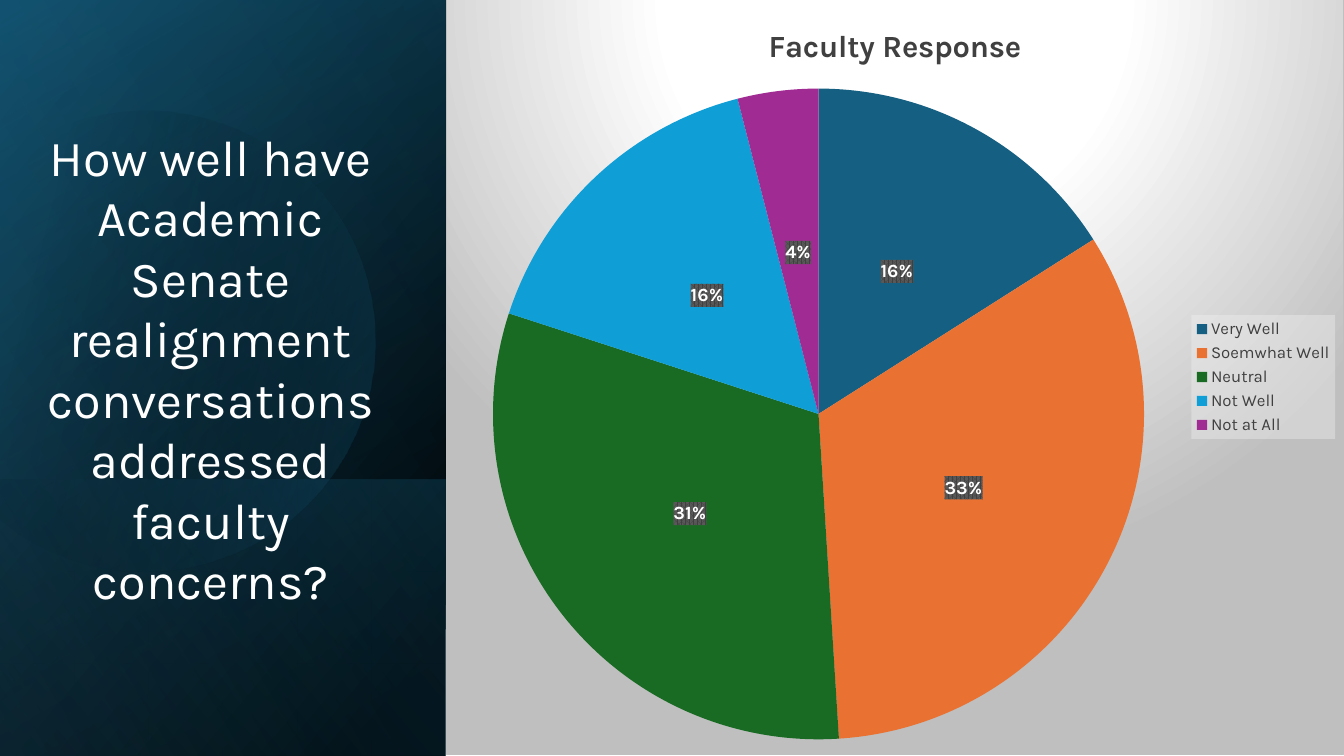
import math

from lxml import etree
from pptx import Presentation
from pptx.chart.data import CategoryChartData
from pptx.dml.color import RGBColor
from pptx.enum.chart import XL_CHART_TYPE, XL_LABEL_POSITION, XL_LEGEND_POSITION
from pptx.enum.shapes import MSO_SHAPE
from pptx.enum.text import MSO_AUTO_SIZE, PP_ALIGN
from pptx.oxml.ns import qn
from pptx.util import Inches, Pt

PIE, RECTANGLE = XL_CHART_TYPE.PIE, MSO_SHAPE.RECTANGLE
LABEL_CENTER, LEGEND_RIGHT = XL_LABEL_POSITION.CENTER, XL_LEGEND_POSITION.RIGHT
CENTER, FIT_SHAPE = PP_ALIGN.CENTER, MSO_AUTO_SIZE.SHAPE_TO_FIT_TEXT

# Content
QUESTION = "How well have Academic Senate realignment conversations addressed faculty concerns?"
CHART_TITLE = "Faculty Response"
RESPONSES = [  # answer, percent, slice colour
    ("Very Well", 16, "156082"),
    ("Soemwhat Well", 33, "E97132"),
    ("Neutral", 31, "196B24"),
    ("Not Well", 16, "0F9ED5"),
    ("Not at All", 4, "A02B93"),
]


class Theme:
    font = "Karla"
    white, black, gray = "FFFFFF", "000000", "404040"
    blue, deep_blue, light_blue = "156082", "104862", "46B1E1"
    border, legend_fill, pattern_back = "BFBFBF", "F2F2F2", "595959"
    question_size, title_size, label_size, legend_size, chart_size = 36, 22, 13.3, 12, 10


# Panel layers are laid out sideways, then turned a quarter turn.
# Each gradient stop is position, colour, opacity, all in percent.
PANEL_WIDTH = 4.42
SLIDE_WIDTH, SLIDE_HEIGHT = 13.33, 7.5
BASE_LAYERS = [  # top, height, angle, stops
    (0, 7.5, 50, [(8, Theme.black, 100), (100, Theme.deep_blue, 100)]),
    (0, 7.5, 30, [(0, Theme.black, 0), (99, Theme.blue, 46)]),
    (4.76, 2.74, 130, [(2, Theme.blue, 29), (100, Theme.black, 30)]),
]
TOP_LAYER = (0, 7.5, 120, [(0, Theme.black, 0), (99, Theme.light_blue, 11)])
DISC_STOPS = [(29, Theme.black, 0), (100, Theme.blue, 43)]
DISC_CENTER, DISC_TURN = (1.58, 3.35), -16.1
DISC_START = (1.49, 1.1)
DISC_CURVES = [  # two handles and an end point; a lone point is a straight edge
    [(2.46, 1.12), (3.35, 1.77), (3.63, 2.75)],
    [(3.98, 3.97), (3.28, 5.23), (2.07, 5.58)],
    [(1.31, 5.8), (0.53, 5.61), (-0.03, 5.14)],
    [(-0.15, 5.03)],
    [(-0.15, 1.75)],
    [(0, 1.61)],
    [(0.23, 1.42), (0.5, 1.28), (0.8, 1.19)],
    [(1.03, 1.13), (1.26, 1.1), (1.49, 1.1)],
]
NAMESPACES = ('xmlns:a="http://schemas.openxmlformats.org/drawingml/2006/main" '
              'xmlns:c="http://schemas.openxmlformats.org/drawingml/2006/chart"')


def rgb(color):
    return RGBColor.from_string(color)


def set_font(font, size, color, bold=False):
    font.name, font.size, font.bold = Theme.font, Pt(size), bold
    font.color.rgb = rgb(color)


def color_xml(color, opacity=100):
    return f'<a:srgbClr val="{color}"><a:alpha val="{opacity * 1000}"/></a:srgbClr>'


def gradient_xml(stops, direction):
    stop_list = "".join(f'<a:gs pos="{position * 1000}">{color_xml(color, opacity)}</a:gs>'
                        for position, color, opacity in stops)
    return (f'<a:gradFill {NAMESPACES} rotWithShape="1"><a:gsLst>{stop_list}</a:gsLst>'
            f'{direction}</a:gradFill>')


def fill_gradient(shape, angle, stops):
    shape.fill.background()
    placeholder_fill = shape.element.spPr.find(qn("a:noFill"))
    gradient = gradient_xml(stops, f'<a:lin ang="{angle * 60000}" scaled="0"/>')
    placeholder_fill.getparent().replace(placeholder_fill, etree.fromstring(gradient))
    shape.line.fill.background()
    shape.shadow.inherit = False


def add_layer(slide, top, height, angle, stops):
    left = (PANEL_WIDTH - height) / 2
    turned_top = top + (height - PANEL_WIDTH) / 2
    layer = slide.shapes.add_shape(RECTANGLE, Inches(left), Inches(turned_top),
                                   Inches(height), Inches(PANEL_WIDTH))
    layer.rotation = 90
    layer.element.spPr.find(qn("a:xfrm")).set("flipH", "1")
    fill_gradient(layer, angle, stops)


def disc_outline(steps=16):
    points = [DISC_START]
    for curve in DISC_CURVES:
        if len(curve) == 1:
            points += curve
            continue
        controls = [points[-1]] + curve
        for step in range(1, steps + 1):
            t = step / steps
            weights = [math.comb(3, i) * t ** i * (1 - t) ** (3 - i) for i in range(4)]
            points.append(tuple(sum(weight * control[axis] for weight, control
                                    in zip(weights, controls)) for axis in (0, 1)))
    return points


def add_disc(slide):
    turn = math.radians(-DISC_TURN)
    center_x, center_y = DISC_CENTER
    outline = []
    for x, y in disc_outline():
        dx, dy = x - center_x, y - center_y
        outline.append((Inches(center_x + dx * math.cos(turn) - dy * math.sin(turn)),
                        Inches(center_y + dx * math.sin(turn) + dy * math.cos(turn))))
    builder = slide.shapes.build_freeform(*outline[0])
    builder.add_line_segments(outline[1:], close=True)
    disc = builder.convert_to_shape()
    disc.rotation = DISC_TURN
    fill_gradient(disc, 30, DISC_STOPS)


def set_chart_fill(element, content):
    properties = etree.fromstring(f"<c:spPr {NAMESPACES}>{content}</c:spPr>")
    element.find(qn("c:txPr")).addprevious(properties)


def add_response_chart(slide):
    data = CategoryChartData()
    data.categories = [answer for answer, _, _ in RESPONSES]
    data.add_series(CHART_TITLE, [percent for _, percent, _ in RESPONSES])
    chart = slide.shapes.add_chart(PIE, Inches(PANEL_WIDTH), Inches(-0.01), Inches(8.91),
                                   Inches(SLIDE_HEIGHT), data).chart
    set_font(chart.font, Theme.chart_size, Theme.black)
    backdrop = gradient_xml(
        [(0, Theme.white, 100), (39, Theme.white, 100), (100, Theme.border, 100)],
        '<a:path path="circle"><a:fillToRect l="50000" t="-80000" r="50000" b="180000"/></a:path>')
    set_chart_fill(chart.element if hasattr(chart, "element") else chart._chartSpace,
                   f'{backdrop}<a:ln w="9525"><a:solidFill>{color_xml(Theme.border)}'
                   '</a:solidFill></a:ln>')

    # Title and legend
    chart.has_title = True
    title = chart.chart_title.text_frame
    title.text = CHART_TITLE
    set_font(title.paragraphs[0].font, Theme.title_size, Theme.gray, bold=True)
    chart.has_legend = True
    legend = chart.legend
    legend.position, legend.include_in_layout = LEGEND_RIGHT, False
    set_font(legend.font, Theme.legend_size, Theme.gray)
    set_chart_fill(legend._element,
                   f"<a:solidFill>{color_xml(Theme.legend_fill, 39)}</a:solidFill>")

    # Slices and percent labels
    plot = chart.plots[0]
    plot.vary_by_categories = True
    series = plot.series[0]
    for index, (_, _, color) in enumerate(RESPONSES):
        slice_format = series.points[index].format
        slice_format.fill.solid()
        slice_format.fill.fore_color.rgb = rgb(color)
        slice_format.line.fill.background()
    labels = series.data_labels
    labels.show_percentage, labels.show_value = True, False
    labels.position = LABEL_CENTER
    set_font(labels.font, Theme.label_size, Theme.white, bold=True)
    set_chart_fill(labels._element,
                   f'<a:pattFill prst="pct75"><a:fgClr>{color_xml(Theme.gray)}</a:fgClr>'
                   f'<a:bgClr>{color_xml(Theme.pattern_back)}</a:bgClr></a:pattFill>')

    # Plot area as shares of the chart
    plot_area = chart._chartSpace.find(f".//{qn('c:plotArea')}")
    for layout in plot_area.findall(qn("c:layout")):
        plot_area.remove(layout)
    shares = "".join(f'<c:{name} val="{share}"/>' for name, share in
                     [("x", 0.052), ("y", 0.118), ("w", 0.726), ("h", 0.862)])
    plot_area.insert(0, etree.fromstring(
        f'<c:layout {NAMESPACES}><c:manualLayout><c:layoutTarget val="inner"/>'
        f'<c:xMode val="edge"/><c:yMode val="edge"/>{shares}</c:manualLayout></c:layout>'))


def add_question(slide):
    box = slide.shapes.add_textbox(Inches(0.21), Inches(1.2), Inches(3.76), Inches(4.95))
    frame = box.text_frame
    frame.word_wrap, frame.auto_size = True, FIT_SHAPE
    paragraph = frame.paragraphs[0]
    paragraph.text, paragraph.alignment = QUESTION, CENTER
    set_font(paragraph.font, Theme.question_size, Theme.white)


def main():
    presentation = Presentation()
    presentation.slide_width = Inches(SLIDE_WIDTH)
    presentation.slide_height = Inches(SLIDE_HEIGHT)
    slide = presentation.slides.add_slide(presentation.slide_layouts[6])
    backdrop = slide.shapes.add_shape(RECTANGLE, 0, 0, Inches(SLIDE_WIDTH), Inches(SLIDE_HEIGHT))
    backdrop.fill.solid()
    backdrop.fill.fore_color.rgb = rgb(Theme.white)
    backdrop.line.fill.background()
    backdrop.shadow.inherit = False
    for layer in BASE_LAYERS:
        add_layer(slide, *layer)
    add_disc(slide)
    add_layer(slide, *TOP_LAYER)
    add_response_chart(slide)
    add_question(slide)
    presentation.save("out.pptx")


if __name__ == "__main__":
    main()
